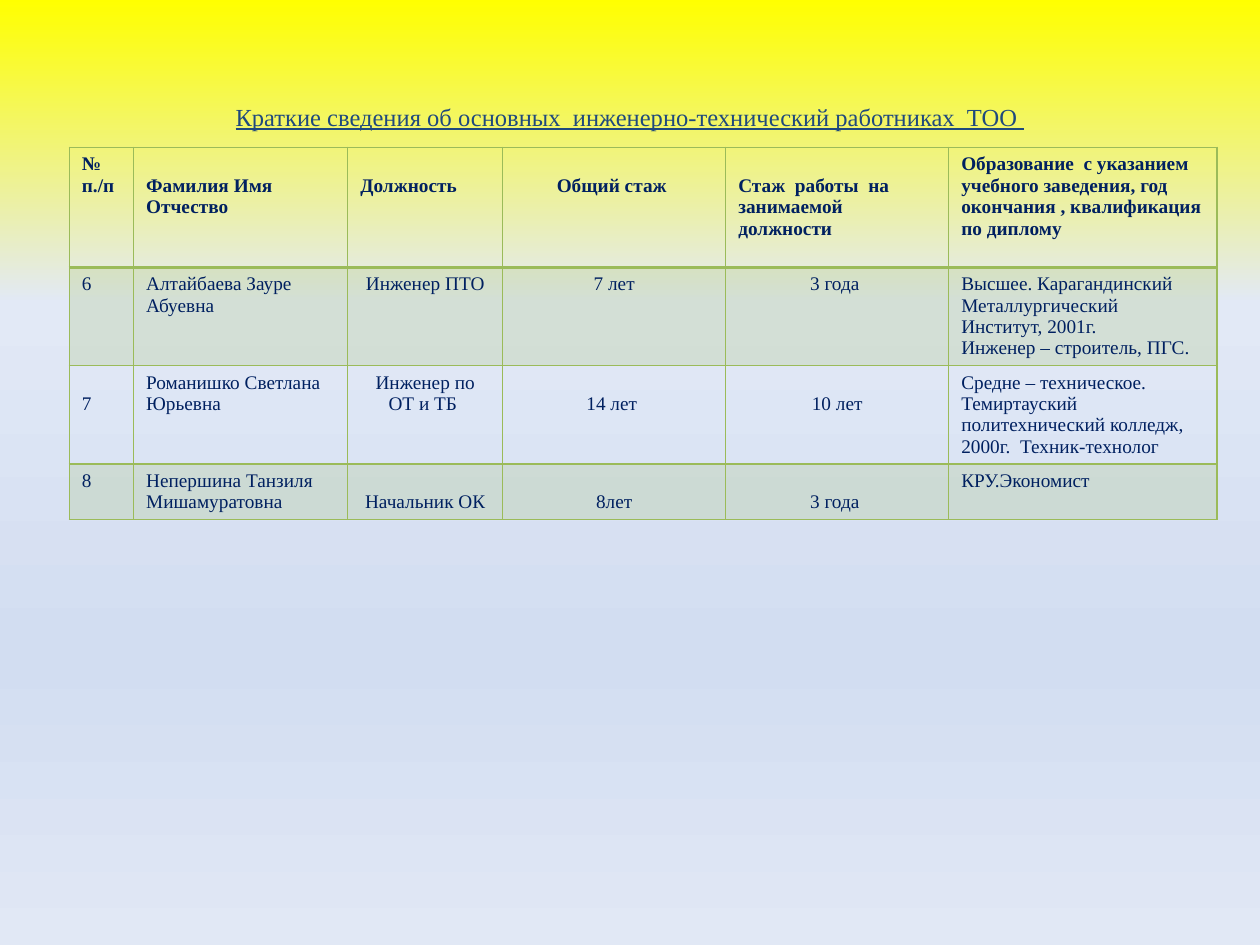
from dataclasses import dataclass

import pptx
import pptx.dml.color
import pptx.enum.text
import pptx.oxml
import pptx.oxml.ns
import pptx.util
from pptx.util import Inches

RGBColor = pptx.dml.color.RGBColor
PP_ALIGN = pptx.enum.text.PP_ALIGN

YELLOW = RGBColor(0xFF, 0xFF, 0x00)
PALE = RGBColor(0xE2, 0xE9, 0xF6)
SKY = RGBColor(0xD2, 0xDD, 0xF1)
MIST = RGBColor(0xE1, 0xE8, 0xF5)
TITLE_BLUE = RGBColor(0x1F, 0x49, 0x7D)
NAVY = RGBColor(0x00, 0x20, 0x60)
GREEN = RGBColor(0x9B, 0xBB, 0x59)

FONT = "Times New Roman"
NS = pptx.oxml.ns.nsdecls("a")
NO_STYLE = "{2D5ABB26-0587-4C30-8999-92F81FD0307C}"
BACKGROUND_STOPS = ((0, YELLOW), (32, PALE), (69, SKY), (100, MIST))
COLUMN_WIDTHS = (0.51, 1.7, 1.23, 1.77, 1.77, 2.13)
ROW_HEIGHTS = (0.95, 0.78, 0.78, 0.44)
MARGIN_TOP = 0.05
LINE_HEIGHT = 0.17


@dataclass
class Cell:
    text: str
    centered: bool = False
    lowered: bool = False  # text starts one line further down


ROWS = (
    (
        Cell("№ п./п"),
        Cell("Фамилия Имя Отчество", lowered=True),
        Cell("Должность", lowered=True),
        Cell("Общий стаж ", centered=True, lowered=True),
        Cell("Стаж  работы  на занимаемой должности", lowered=True),
        Cell("Образование  с указанием учебного заведения, год окончания , "
             "квалификация по диплому"),
    ),
    (
        Cell("6"),
        Cell("Алтайбаева Зауре Абуевна"),
        Cell("Инженер ПТО", centered=True),
        Cell("7 лет", centered=True),
        Cell("3 года ", centered=True),
        Cell("Высшее. Карагандинский Металлургический Институт, 2001г.\n"
             "Инженер – строитель, ПГС."),
    ),
    (
        Cell("7", lowered=True),
        Cell("Романишко Светлана Юрьевна"),
        Cell("Инженер по ОТ и ТБ ", centered=True),
        Cell("14 лет ", centered=True, lowered=True),
        Cell("10 лет", centered=True, lowered=True),
        Cell("Средне – техническое. Темиртауский политехнический колледж, "
             "2000г.  Техник-технолог"),
    ),
    (
        Cell("8"),
        Cell("Непершина Танзиля Мишамуратовна"),
        Cell("Начальник ОК", centered=True, lowered=True),
        Cell("8лет", centered=True, lowered=True),
        Cell("3 года ", centered=True, lowered=True),
        Cell("КРУ.Экономист"),
    ),
)


def format_runs(tf, size: float, color: RGBColor, bold: bool = False,
                underline: bool = False) -> None:
    for p in tf.paragraphs:
        for r in p.runs:
            r.font.name = FONT
            r.font.size = pptx.util.Pt(size)
            r.font.color.rgb = color
            r.font.bold = bold
            r.font.underline = underline


def paint_background(s) -> None:
    fill = s.background.fill
    fill.gradient()
    fill.gradient_angle = 270
    stops = s._element.find(".//" + pptx.oxml.ns.qn("a:gsLst"))
    for stop in list(stops):
        stops.remove(stop)
    for percent, color in BACKGROUND_STOPS:
        stops.append(pptx.oxml.parse_xml(
            f'<a:gs {NS} pos="{percent * 1000}"><a:srgbClr val="{color}"/></a:gs>'))


def add_title(s, text: str) -> None:
    title = s.shapes.title
    title.left, title.top = Inches(0.5), Inches(0.3)
    title.width, title.height = Inches(9), Inches(1.25)
    tf = title.text_frame
    tf.text = text
    tf.vertical_anchor = pptx.enum.text.MSO_ANCHOR.MIDDLE
    tf.paragraphs[0].alignment = PP_ALIGN.CENTER
    format_runs(tf, 14, TITLE_BLUE, underline=True)


def add_borders(cell, top: float, bottom: float) -> None:
    tc_pr = cell._tc.get_or_add_tcPr()
    for side, width in (("L", 1), ("R", 1), ("T", top), ("B", bottom)):
        tc_pr.append(pptx.oxml.parse_xml(
            f'<a:ln{side} {NS} w="{pptx.util.Pt(width)}"><a:solidFill>'
            f'<a:srgbClr val="{GREEN}"/></a:solidFill></a:ln{side}>'))


def fill_band(cell, opacity: int) -> None:
    cell.fill.solid()
    cell.fill.fore_color.rgb = GREEN
    color = cell._tc.tcPr.find(pptx.oxml.ns.qn("a:solidFill"))[0]
    color.append(pptx.oxml.parse_xml(f'<a:alpha {NS} val="{opacity * 1000}"/>'))


def draw_cell(cell, content: Cell, row: int) -> None:
    cell.text = content.text
    cell.margin_top = Inches(MARGIN_TOP + LINE_HEIGHT * content.lowered)
    for p in cell.text_frame.paragraphs:
        p.alignment = PP_ALIGN.CENTER if content.centered else PP_ALIGN.LEFT
    format_runs(cell.text_frame, 11, NAVY, bold=row == 0)
    add_borders(cell, top=2 if row == 1 else 1, bottom=2 if row == 0 else 1)
    if row % 2:
        fill_band(cell, 20)
    else:
        cell.fill.background()


def add_staff_table(s) -> None:
    frame = s.shapes.add_table(
        len(ROWS), len(COLUMN_WIDTHS), Inches(0.55), Inches(1.17),
        Inches(sum(COLUMN_WIDTHS)), Inches(sum(ROW_HEIGHTS)))
    table = frame.table
    table.horz_banding = False
    table._tbl.tblPr.find(pptx.oxml.ns.qn("a:tableStyleId")).text = NO_STYLE
    for column, width in zip(table.columns, COLUMN_WIDTHS):
        column.width = Inches(width)
    for i, (height, contents) in enumerate(zip(ROW_HEIGHTS, ROWS)):
        table.rows[i].height = Inches(height)
        for j, content in enumerate(contents):
            draw_cell(table.cell(i, j), content, i)


def main() -> None:
    prs = pptx.Presentation()
    prs.slide_width, prs.slide_height = Inches(10), Inches(7.5)
    s = prs.slides.add_slide(prs.slide_layouts[5])
    paint_background(s)
    add_title(s, "Краткие сведения об основных  инженерно-технический работниках  ТОО ")
    add_staff_table(s)
    prs.save("out.pptx")


if __name__ == "__main__":
    main()
